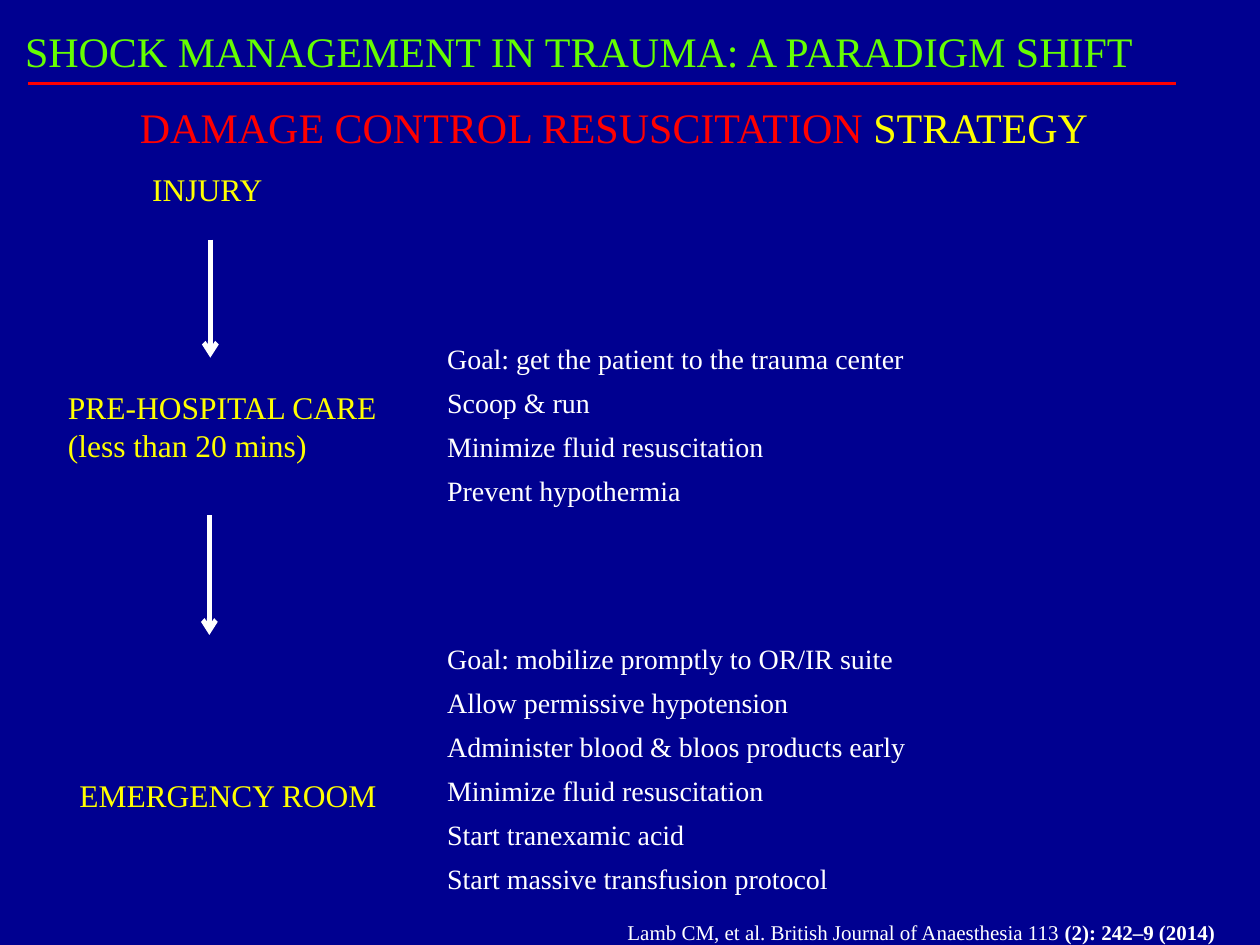
from lxml.etree import SubElement
from pptx import Presentation
from pptx.dml.color import RGBColor
from pptx.enum.shapes import MSO_CONNECTOR
from pptx.enum.text import MSO_ANCHOR, MSO_AUTO_SIZE, PP_ALIGN
from pptx.oxml.ns import qn
from pptx.util import Cm, Pt

BACKGROUND, WHITE, YELLOW, RED, GREEN = "000090", "FFFFFF", "FFFF00", "FF0000", "66FF00"
FONT = "Times New Roman"


def color(value):
    return RGBColor.from_string(value)


class SlideBuilder:
    def __init__(self, slide):
        self.slide = slide
        slide.background.fill.solid()
        slide.background.fill.fore_color.rgb = color(BACKGROUND)

    def place(self, shape, box):
        shape.left, shape.top, shape.width, shape.height = map(Cm, box)

    def frame(self, shape, wrap=False):
        text_frame = shape.text_frame
        text_frame.word_wrap = wrap
        text_frame.auto_size = MSO_AUTO_SIZE.SHAPE_TO_FIT_TEXT
        text_frame.vertical_anchor = MSO_ANCHOR.TOP
        return text_frame

    def format_run(self, run, size, fill, bold=False):
        run.font.name = FONT
        run.font.size = Pt(size)
        run.font.bold = bold
        run.font.color.rgb = color(fill)

    def title(self, text, box):
        shape = self.slide.shapes.title
        self.place(shape, box)
        text_frame = self.frame(shape)
        text_frame.text = text
        paragraph = text_frame.paragraphs[0]
        paragraph.alignment = PP_ALIGN.LEFT
        self.format_run(paragraph.runs[0], 24, GREEN)

    def bullet_list(self, index, items, box):
        shape = self.slide.placeholders[index]
        self.place(shape, box)
        text_frame = self.frame(shape, wrap=True)
        text_frame.text = "\n".join(items)
        for paragraph in text_frame.paragraphs:
            properties = paragraph._p.get_or_add_pPr()
            properties.set("marL", "0")
            properties.set("indent", "0")
            SubElement(properties, qn("a:buNone"))
            paragraph.space_before = Pt(0)
            paragraph.space_after = Pt(6)
            self.format_run(paragraph.runs[0], 16, WHITE)

    def label(self, text, box):
        text_frame = self.frame(self.slide.shapes.add_textbox(*map(Cm, box)))
        text_frame.text = text
        for paragraph in text_frame.paragraphs:
            self.format_run(paragraph.runs[0], 18, YELLOW)

    def rich_line(self, parts, size, box):
        text_frame = self.frame(self.slide.shapes.add_textbox(*map(Cm, box)))
        for text, fill, bold in parts:
            run = text_frame.paragraphs[0].add_run()
            run.text = text
            self.format_run(run, size, fill, bold)

    def line(self, start, end, fill, width, arrow=False):
        connector = self.slide.shapes.add_connector(
            MSO_CONNECTOR.STRAIGHT, *map(Cm, start + end))
        connector.line.color.rgb = color(fill)
        connector.line.width = Pt(width)
        if arrow:
            SubElement(connector.line._get_or_add_ln(), qn("a:tailEnd"), type="arrow")
        SubElement(connector._element.spPr, qn("a:effectLst"))


def main():
    presentation = Presentation()
    presentation.slide_width, presentation.slide_height = Cm(25.4), Cm(19.05)
    slide = presentation.slides.add_slide(presentation.slide_layouts[3])
    builder = SlideBuilder(slide)

    builder.title("SHOCK MANAGEMENT IN TRAUMA: A PARADIGM SHIFT", (0.25, 0.38, 23.04, 1.27))
    builder.line((0.56, 1.68), (23.7, 1.68), RED, 2)
    builder.rich_line(
        [("DAMAGE CONTROL RESUSCITATION ", RED, False), ("STRATEGY", YELLOW, False)],
        24, (2.57, 1.93, 20.47, 1.27))

    builder.label("INJURY", (2.82, 3.3, 2.77, 1.02))
    builder.line((4.24, 4.83), (4.24, 7.21), WHITE, 2.75, arrow=True)
    builder.label("PRE-HOSPITAL CARE\n(less than 20 mins)", (1.12, 7.7, 6.81, 1.8))
    builder.line((4.22, 10.39), (4.22, 12.8), WHITE, 2.75, arrow=True)
    builder.label("EMERGENCY ROOM", (1.35, 15.52, 6.58, 1.02))

    builder.bullet_list(1, [
        "Goal: get the patient to the trauma center",
        "Scoop & run",
        "Minimize fluid resuscitation",
        "Prevent hypothermia",
    ], (8.76, 6.76, 9.83, 3.63))
    builder.bullet_list(2, [
        "Goal: mobilize promptly to OR/IR suite",
        "Allow permissive hypotension",
        "Administer blood & bloos products early",
        "Minimize fluid resuscitation",
        "Start tranexamic acid",
        "Start massive transfusion protocol",
    ], (8.76, 12.8, 11.61, 5.44))

    builder.rich_line(
        [("Lamb CM, et al. British Journal of Anaesthesia 113 ", WHITE, False),
         ("(2): 242–9 (2014)", WHITE, True)],
        12, (12.4, 18.42, 12.47, 0.76))

    presentation.save("out.pptx")


if __name__ == "__main__":
    main()
